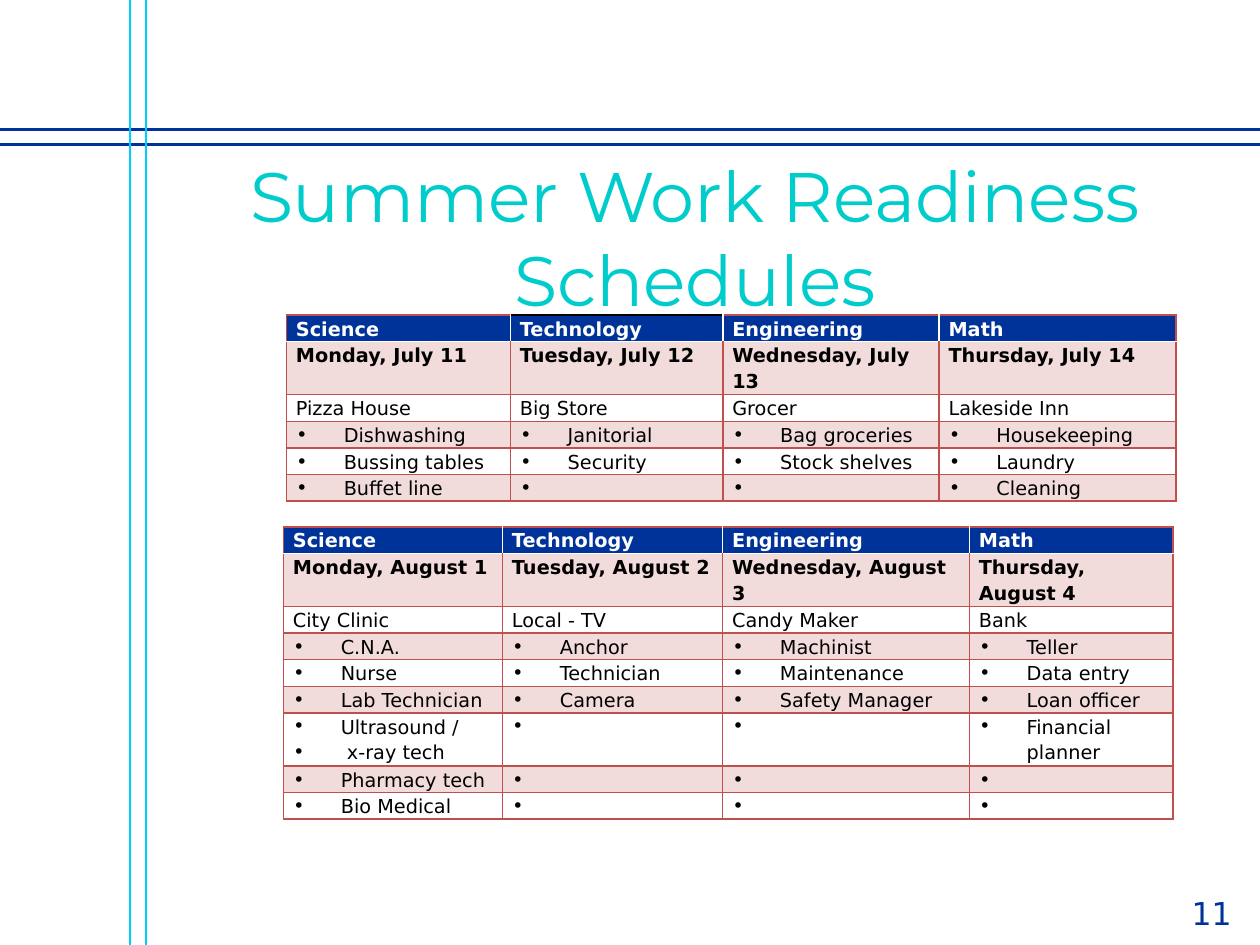
"""Build the summer work readiness schedule slide with its two timetables."""
from lxml import etree
from pptx import Presentation
from pptx import util as u
from pptx.dml.color import RGBColor
from pptx.enum import shapes, text
from pptx.oxml import ns

Pt = u.Pt
NAVY = RGBColor(0x00, 0x33, 0x99)
CYAN = RGBColor(0x00, 0xCC, 0xFF)
TEAL = RGBColor(0x00, 0xCC, 0xCC)
RED = RGBColor(0xC0, 0x50, 0x4D)
WHITE = RGBColor(0xFF, 0xFF, 0xFF)
BLACK = RGBColor(0x00, 0x00, 0x00)
BODY_FONT, TITLE_FONT = "DejaVu Sans", "Montserrat"

WIDTH, HEIGHT = 720, 540
ROW_HEIGHT = 15.12
INDENT = 27.36
TITLE = "Summer Work Readiness Schedules"
PAGE_NUMBER = "11"
SUBJECTS = ["Science", "Technology", "Engineering", "Math"]

SCHEDULES = [
    {
        "left": 163.7, "top": 180, "columns": [128, 121.4, 123.6, 135.4],
        "black_top": "Technology",
        "rows": [
            SUBJECTS,
            ["Monday, July 11", "Tuesday, July 12", "Wednesday, July 13", "Thursday, July 14"],
            ["Pizza House", "Big Store", "Grocer", "Lakeside Inn"],
            ["Dishwashing", "Janitorial", "Bag groceries", "Housekeeping"],
            ["Bussing tables", "Security", "Stock shelves", "Laundry"],
            ["Buffet line", " ", " ", "Cleaning"],
        ],
        "tall_rows": [1],
    },
    {
        "left": 162, "top": 301, "columns": [125.2, 125.8, 141, 116.4],
        "black_top": None,
        "rows": [
            SUBJECTS,
            ["Monday, August 1", "Tuesday, August 2", "Wednesday, August 3", "Thursday, August 4"],
            ["City Clinic", "Local - TV", "Candy Maker", "Bank"],
            ["C.N.A.", "Anchor", "Machinist", "Teller"],
            ["Nurse", "Technician", "Maintenance", "Data entry"],
            ["Lab Technician", "Camera", "Safety Manager", "Loan officer"],
            ["Ultrasound /\n x-ray tech", " ", " ", "Financial planner"],
            ["Pharmacy tech", " ", " ", " "],
            ["Bio Medical", " ", " ", " "],
        ],
        "tall_rows": [1, 6],
    },
]

RULES = [
    ((0, 82.8), (WIDTH, 82.8), NAVY, 1.75),
    ((0, 74.2), (WIDTH, 74.2), NAVY, 1.75),
    ((83.5, 0), (83.5, HEIGHT), CYAN, 1.5),
    ((74.2, 0), (74.2, HEIGHT), CYAN, 1.5),
]


def add_child(parent, tag, **attributes):
    return etree.SubElement(parent, ns.qn(tag), attributes)


def style_font(font, name, size, color, bold=False):
    font.name, font.size, font.bold = name, Pt(size), bold
    font.color.rgb = color


def add_rule(page, start, end, color, weight):
    rule = page.shapes.add_connector(
        shapes.MSO_CONNECTOR.STRAIGHT, *map(Pt, start), *map(Pt, end))
    rule.line.color.rgb, rule.line.width = color, Pt(weight)
    add_child(rule._element.spPr, "a:effectLst")


def add_label(page, bounds, words, name, size, color, align, anchor):
    box = page.shapes.add_textbox(*map(Pt, bounds))
    frame = box.text_frame
    frame.word_wrap, frame.vertical_anchor = True, anchor
    para = frame.paragraphs[0]
    para.text, para.alignment = words, align
    style_font(para.font, name, size, color)


def add_bullet(para):
    properties = para._p.get_or_add_pPr()
    properties.set("marL", str(Pt(INDENT)))
    properties.set("indent", str(-Pt(INDENT)))
    add_child(add_child(properties, "a:buClr"), "a:srgbClr", val=str(BLACK))
    add_child(properties, "a:buChar", char="∙")


def set_borders(cell, colors):
    properties = cell._tc.get_or_add_tcPr()
    for side, color in zip("LRTB", colors):
        border = add_child(properties, f"a:ln{side}", w=str(Pt(1)))
        add_child(add_child(border, "a:solidFill"), "a:srgbClr", val=str(color))


def fill_cell(cell, row):
    if row % 2 == 0 and row > 0:
        cell.fill.background()
        return
    cell.fill.solid()
    cell.fill.fore_color.rgb = RED if row else NAVY
    if row:
        color = cell._tc.tcPr.find(ns.qn("a:solidFill"))[0]
        add_child(color, "a:alpha", val="20000")


def write_cell(cell, words, row):
    cell.margin_left = cell.margin_right = Pt(5.4)
    cell.margin_top = cell.margin_bottom = 0
    cell.text = words
    for para in cell.text_frame.paragraphs:
        para.line_spacing = 1.15
        if row > 2:
            add_bullet(para)
        style_font(para.font, BODY_FONT, 11, BLACK if row else WHITE, row < 2)


def border_colors(row, column, last, black_top):
    if row == 0:
        return (WHITE if column else RED, RED if column == last else WHITE,
                BLACK if black_top else RED, WHITE)
    return RED, RED, WHITE if row == 1 else RED, RED


def add_schedule(page, schedule):
    rows, columns = schedule["rows"], schedule["columns"]
    heights = [ROW_HEIGHT * (2 if i in schedule["tall_rows"] else 1) for i in range(len(rows))]
    bounds = schedule["left"], schedule["top"], sum(columns), sum(heights)
    table = page.shapes.add_table(len(rows), len(columns), *map(Pt, bounds)).table
    table.first_row = table.horz_banding = False
    for column, width in zip(table.columns, columns):
        column.width = Pt(width)
    for r, (entries, height) in enumerate(zip(rows, heights)):
        table.rows[r].height = Pt(height)
        for c, words in enumerate(entries):
            cell = table.cell(r, c)
            black_top = words == schedule["black_top"]
            set_borders(cell, border_colors(r, c, len(columns) - 1, black_top))
            fill_cell(cell, r)
            write_cell(cell, words, r)


def main():
    deck = Presentation()
    deck.slide_width, deck.slide_height = Pt(WIDTH), Pt(HEIGHT)
    page = deck.slides.add_slide(deck.slide_layouts[6])
    for rule in RULES:
        add_rule(page, *rule)
    add_label(page, (673.9, 507.6, 46.1, 28.8), PAGE_NUMBER, BODY_FONT, 18, NAVY,
              text.PP_ALIGN.LEFT, text.MSO_ANCHOR.TOP)
    add_label(page, (74.2, 90, 645.8, 90), TITLE, TITLE_FONT, 40, TEAL,
              text.PP_ALIGN.CENTER, text.MSO_ANCHOR.MIDDLE)
    for schedule in SCHEDULES:
        add_schedule(page, schedule)
    deck.save("out.pptx")


if __name__ == "__main__":
    main()
